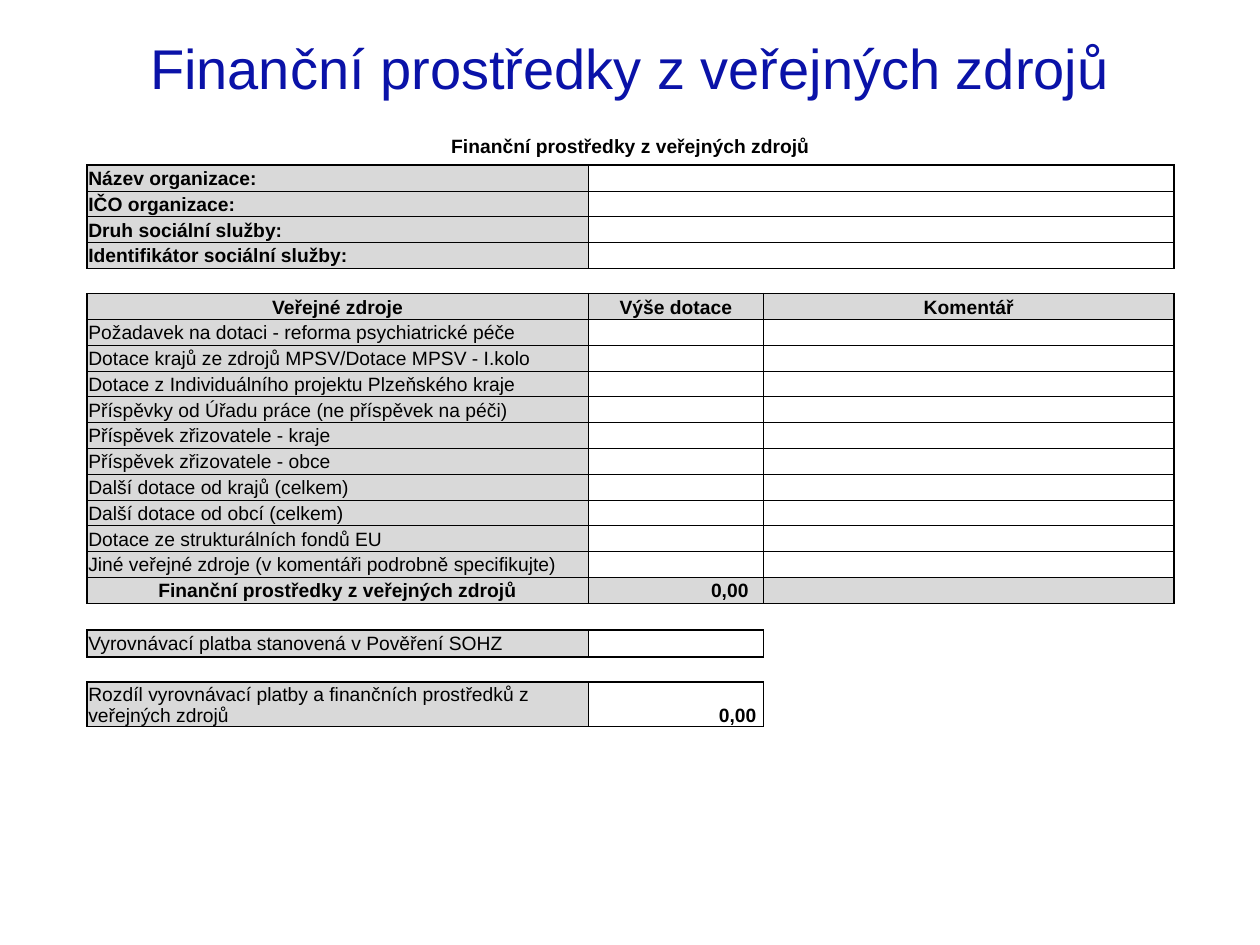
from lxml.etree import SubElement
from pptx import Presentation
from pptx.dml.color import RGBColor
from pptx.enum.text import MSO_ANCHOR, PP_ALIGN
from pptx.oxml.ns import qn
from pptx.util import Cm, Pt

FONT = "Arial"
BLUE = RGBColor(0x0A, 0x12, 0xA8)
BLACK = RGBColor(0x00, 0x00, 0x00)
GREY = RGBColor(0xD9, 0xD9, 0xD9)
WHITE = RGBColor(0xFF, 0xFF, 0xFF)
NO_STYLE = "{2D5ABB26-0587-4C30-8999-92F81FD0307C}"
THIN, THICK = 0.5, 1

HEADING = "Finanční prostředky z veřejných zdrojů"
ORGANIZATION = [
    "Název organizace:",
    "IČO organizace:",
    "Druh sociální služby:",
    "Identifikátor sociální služby:",
]
SOURCE_HEADERS = ["Veřejné zdroje", "Výše dotace", "Komentář"]
SOURCES = [
    "Požadavek na dotaci - reforma psychiatrické péče",
    "Dotace krajů ze zdrojů MPSV/Dotace MPSV - I.kolo",
    "Dotace z Individuálního projektu Plzeňského kraje",
    "Příspěvky od Úřadu práce (ne příspěvek na péči)",
    "Příspěvek zřizovatele - kraje",
    "Příspěvek zřizovatele - obce",
    "Další dotace od krajů (celkem)",
    "Další dotace od obcí (celkem)",
    "Dotace ze strukturálních fondů EU",
    "Jiné veřejné zdroje (v komentáři podrobně specifikujte)",
]
TOTAL = "0,00"
PAYMENT = "Vyrovnávací platba stanovená v Pověření SOHZ"
DIFFERENCE = "Rozdíl vyrovnávací platby a finančních prostředků z veřejných zdrojů"
DIFFERENCE_VALUE = "0,00"

COLUMN_WIDTHS = [10.11, 3.53, 5.36, 2.92]
LINE = 0.52
ROW_HEIGHTS = (
    [0.61] + [LINE] * len(ORGANIZATION) + [0.5]
    + [LINE] * (len(SOURCES) + 2) + [0.54, 0.54, 0.49, 0.89, 0.43]
)

# Rows where each block of the form begins
ORGANIZATION_ROW = 1
SOURCES_ROW = ORGANIZATION_ROW + len(ORGANIZATION) + 1
TOTAL_ROW = SOURCES_ROW + len(SOURCES) + 1
PAYMENT_ROW = TOTAL_ROW + 2
DIFFERENCE_ROW = PAYMENT_ROW + 2


def write(frame, text, *, size=11, color=BLACK, bold=False,
          align=PP_ALIGN.LEFT, spacing=None):
    paragraph = frame.paragraphs[0]
    paragraph.alignment = align
    paragraph.line_spacing = spacing
    run = paragraph.add_run()
    run.text = text
    run.font.name = FONT
    run.font.size = Pt(size)
    run.font.bold = bold
    run.font.color.rgb = color


def draw_borders(cell, **widths):
    """Draw cell edges; widths are points keyed L, R, T and B."""
    properties = cell._tc.get_or_add_tcPr()
    for position, side in enumerate(side for side in "LRTB" if side in widths):
        line = properties.makeelement(
            qn(f"a:ln{side}"), {"w": str(Pt(widths[side]))})
        fill = SubElement(line, qn("a:solidFill"))
        SubElement(fill, qn("a:srgbClr"), val=str(BLACK))
        properties.insert(position, line)


def frame_block(table, first, last, starts, bottom=THICK):
    """Rule rows first to last, heavier outside; starts are the cells' columns."""
    for row in range(first, last + 1):
        for column in starts:
            draw_borders(
                table.cell(row, column),
                L=THICK if column == starts[0] else THIN,
                R=THICK if column == starts[-1] else THIN,
                T=THICK if row == first else THIN,
                B=bottom if row == last else THIN,
            )


def fill_cell(cell, text="", fill=GREY, right=0.03, anchor=MSO_ANCHOR.MIDDLE, **style):
    cell.fill.solid()
    cell.fill.fore_color.rgb = fill
    cell.margin_right = Cm(right)
    cell.vertical_anchor = anchor
    if text:
        write(cell.text_frame, text, **style)


def add_form(slide):
    table = slide.shapes.add_table(
        len(ROW_HEIGHTS), len(COLUMN_WIDTHS), Cm(1.75), Cm(2.72),
        Cm(sum(COLUMN_WIDTHS)), Cm(sum(ROW_HEIGHTS))).table
    table.first_row = table.horz_banding = False
    table._tbl.tblPr.find(qn("a:tableStyleId")).text = NO_STYLE
    for column, width in zip(table.columns, COLUMN_WIDTHS):
        column.width = Cm(width)
    for row, height in zip(table.rows, ROW_HEIGHTS):
        row.height = Cm(height)
    for cell in table.iter_cells():
        cell.margin_left = cell.margin_right = cell.margin_top = Cm(0.03)
        cell.margin_bottom = 0
        cell.fill.background()
        SubElement(cell.text_frame.paragraphs[0]._p, qn("a:endParaRPr"), sz="1100")

    center = {"bold": True, "align": PP_ALIGN.CENTER}
    table.cell(0, 0).merge(table.cell(0, 3))
    write(table.cell(0, 0).text_frame, HEADING, **center)

    for row, label in enumerate(ORGANIZATION, ORGANIZATION_ROW):
        table.cell(row, 1).merge(table.cell(row, 3))
        fill_cell(table.cell(row, 0), label, bold=True)
        fill_cell(table.cell(row, 1), fill=WHITE)

    for row in range(SOURCES_ROW, TOTAL_ROW + 1):
        table.cell(row, 2).merge(table.cell(row, 3))
    for column, header in enumerate(SOURCE_HEADERS):
        fill_cell(table.cell(SOURCES_ROW, column), header, **center)
    for row, source in enumerate(SOURCES, SOURCES_ROW + 1):
        fill_cell(table.cell(row, 0), source)
    fill_cell(table.cell(TOTAL_ROW, 0), HEADING, **center)
    fill_cell(table.cell(TOTAL_ROW, 1), TOTAL, right=0.3,
              bold=True, align=PP_ALIGN.RIGHT)
    fill_cell(table.cell(TOTAL_ROW, 2))

    fill_cell(table.cell(PAYMENT_ROW, 0), PAYMENT)
    fill_cell(table.cell(DIFFERENCE_ROW, 0), DIFFERENCE, anchor=MSO_ANCHOR.BOTTOM)
    fill_cell(table.cell(DIFFERENCE_ROW, 1), DIFFERENCE_VALUE, fill=WHITE, right=0.14,
              anchor=MSO_ANCHOR.BOTTOM, bold=True, align=PP_ALIGN.RIGHT)

    frame_block(table, ORGANIZATION_ROW, SOURCES_ROW - 2, (0, 1))
    frame_block(table, SOURCES_ROW, TOTAL_ROW, (0, 1, 2), bottom=THIN)
    for row in (PAYMENT_ROW, DIFFERENCE_ROW):
        frame_block(table, row, row, (0, 1))


def main():
    presentation = Presentation()
    presentation.slide_width, presentation.slide_height = Cm(25.4), Cm(19.05)
    slide = presentation.slides.add_slide(presentation.slide_layouts[5])
    title = slide.shapes.title
    title.left, title.top, title.width, title.height = (
        Cm(1.75), Cm(0.53), Cm(21.9), Cm(1.8))
    title.text_frame.vertical_anchor = MSO_ANCHOR.MIDDLE
    write(title.text_frame, HEADING, size=32, color=BLUE,
          align=PP_ALIGN.CENTER, spacing=0.9)
    add_form(slide)
    presentation.save("out.pptx")


if __name__ == "__main__":
    main()
